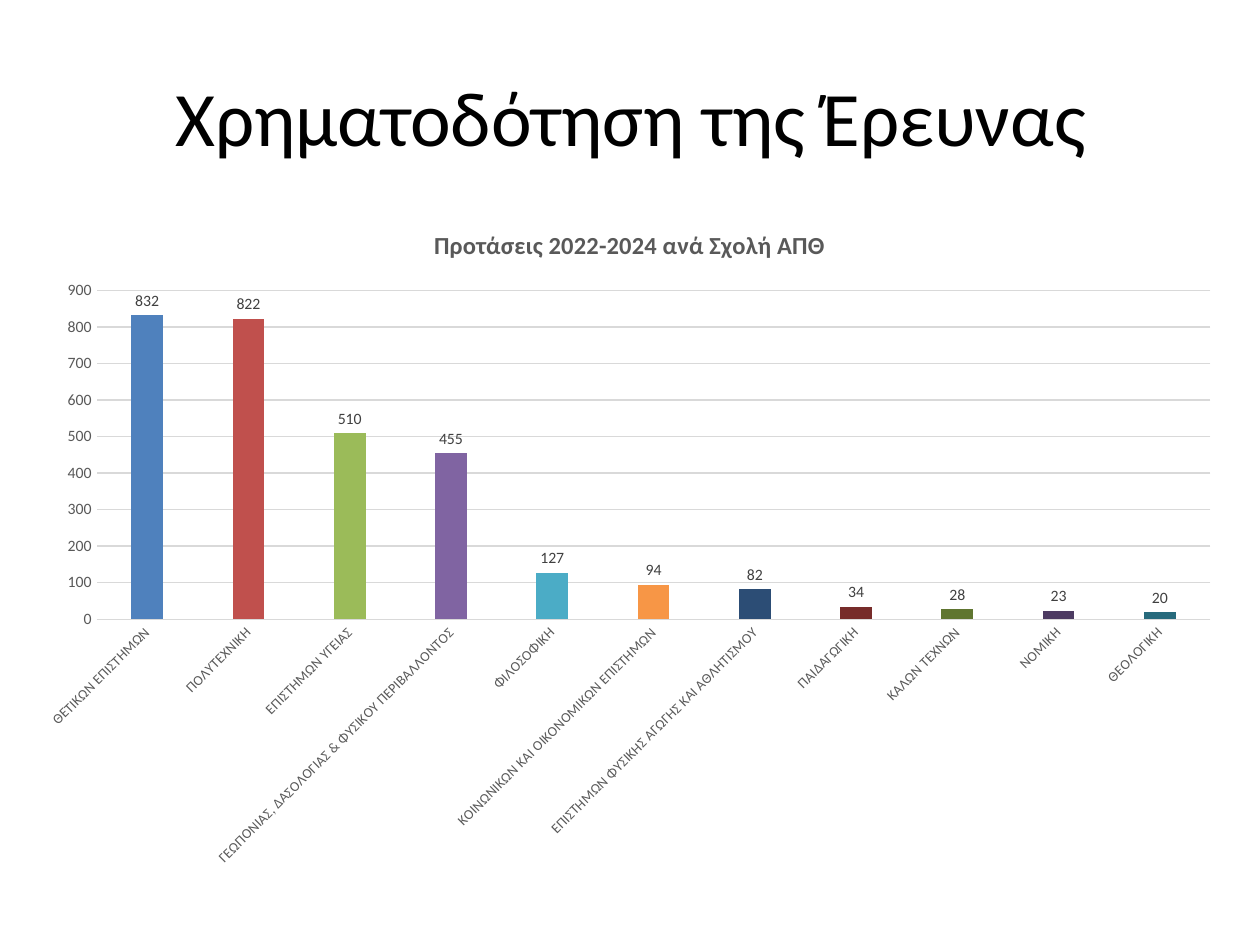
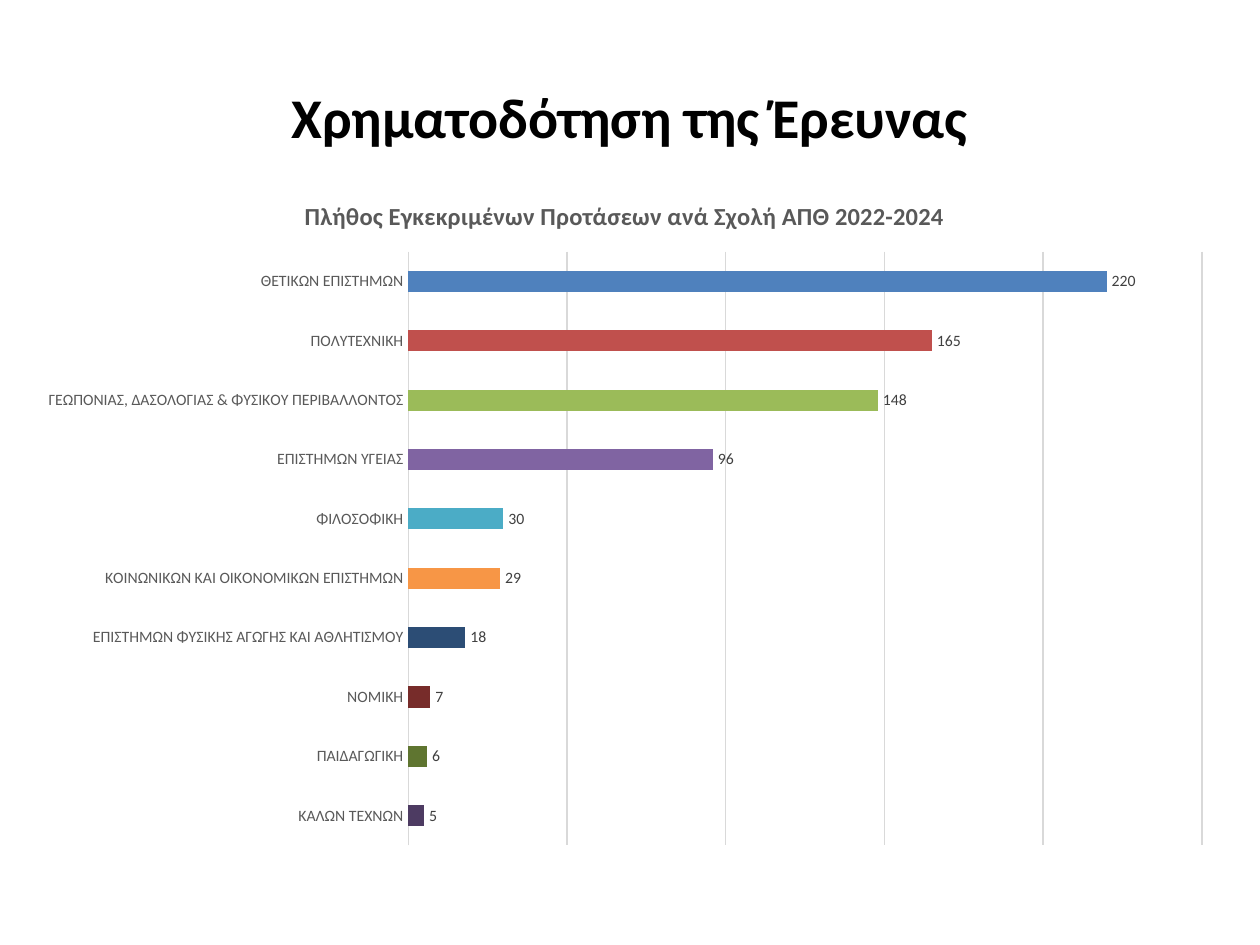
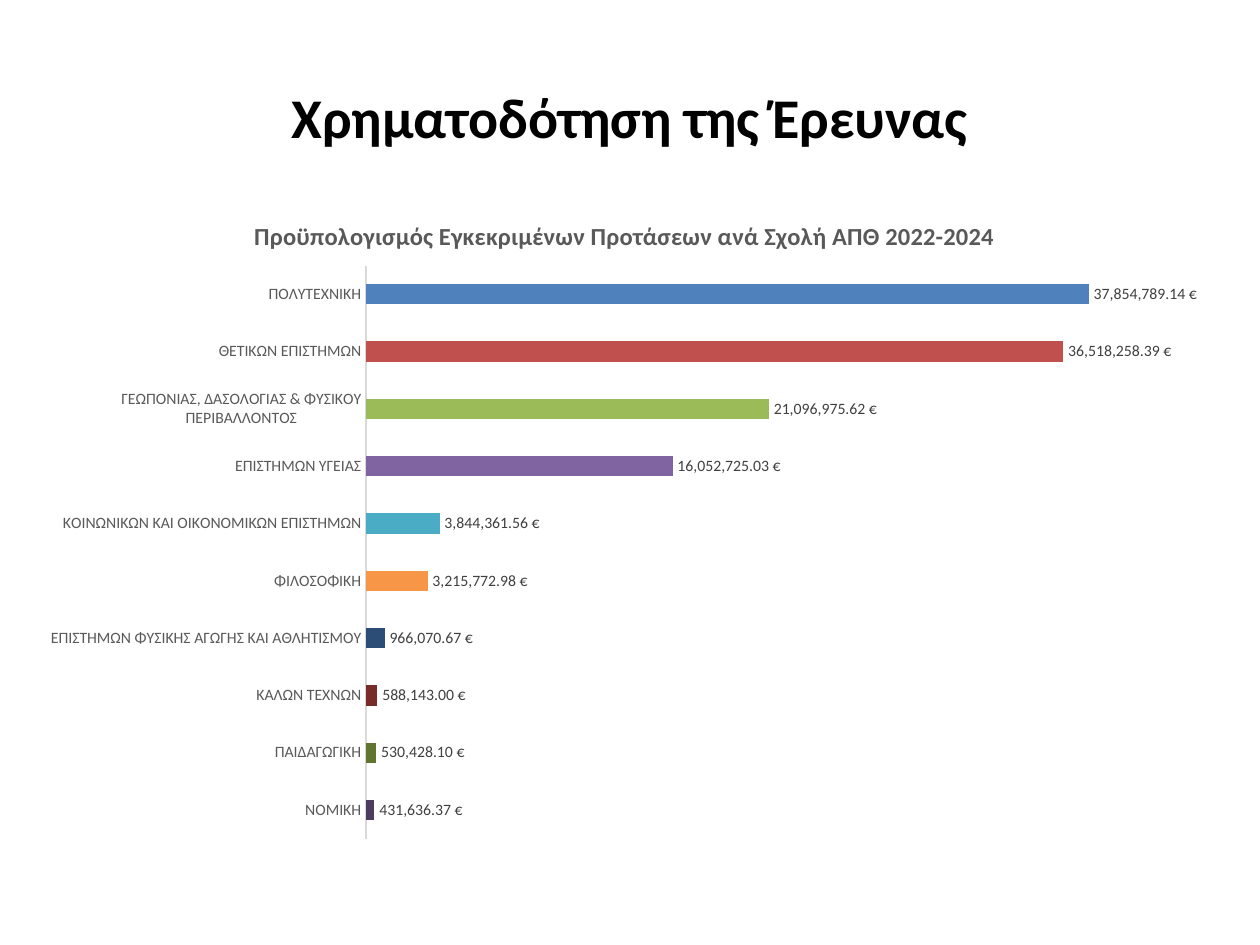
from lxml import etree
from pptx import Presentation
from pptx import util as u
from pptx.chart.data import CategoryChartData
from pptx.dml.color import RGBColor
from pptx.enum import chart as charts
from pptx.enum import text
from pptx.oxml.ns import qn

FONT = "Calibri"
COLOURS = {"ink": "000000", "axis": "595959", "label": "404040", "rule": "D9D9D9"}
BARS = ["4F81BD", "C0504D", "9BBB59", "8064A2", "4BACC6", "F79646",
        "2C4D75", "772C2A", "5F7530", "4D3B62", "276A7C"]
SCHOOLS = {
    "science": "ΘΕΤΙΚΩΝ ΕΠΙΣΤΗΜΩΝ",
    "engineering": "ΠΟΛΥΤΕΧΝΙΚΗ",
    "health": "ΕΠΙΣΤΗΜΩΝ ΥΓΕΙΑΣ",
    "agriculture": "ΓΕΩΠΟΝΙΑΣ, ΔΑΣΟΛΟΓΙΑΣ & ΦΥΣΙΚΟΥ ΠΕΡΙΒΑΛΛΟΝΤΟΣ",
    "philosophy": "ΦΙΛΟΣΟΦΙΚΗ",
    "economics": "ΚΟΙΝΩΝΙΚΩΝ ΚΑΙ ΟΙΚΟΝΟΜΙΚΩΝ ΕΠΙΣΤΗΜΩΝ",
    "sport": "ΕΠΙΣΤΗΜΩΝ ΦΥΣΙΚΗΣ ΑΓΩΓΗΣ ΚΑΙ ΑΘΛΗΤΙΣΜΟΥ",
    "education": "ΠΑΙΔΑΓΩΓΙΚΗ",
    "arts": "ΚΑΛΩΝ ΤΕΧΝΩΝ",
    "law": "ΝΟΜΙΚΗ",
    "theology": "ΘΕΟΛΟΓΙΚΗ",
}
HEADING = "Χρηματοδότηση της Έρευνας"


def style(font, size, colour, bold=False):
    font.name, font.size, font.bold = FONT, u.Pt(size), bold
    font.color.rgb = RGBColor.from_string(COLOURS[colour])


def write(frame, words, size=32, colour="ink", bold=True):
    para = frame.paragraphs[0]
    para.alignment = text.PP_ALIGN.CENTER
    span = para.add_run()
    span.text = words
    style(span.font, size, colour, bold)


def rule(line):
    line.width = u.Pt(0.75)
    line.color.rgb = RGBColor.from_string(COLOURS["rule"])


def lay_out(parent, inner=False, **percents):
    layout = parent.find(qn("c:layout"))
    if layout is None:
        layout = etree.Element(qn("c:layout"))
        parent.insert(0, layout)
    manual = etree.SubElement(layout, qn("c:manualLayout"))
    settings = {"layoutTarget": "inner"} if inner else {}
    settings |= {"xMode": "edge", "yMode": "edge"}
    settings |= {key: str(round(value / 100, 4)) for key, value in percents.items()}
    for key, value in settings.items():
        etree.SubElement(manual, qn(f"c:{key}")).set("val", value)


class Report:
    """Holds the deck, its shared style and the current page."""

    def __init__(self):
        self.deck = Presentation()
        self.deck.slide_width, self.deck.slide_height = u.Inches(10), u.Inches(7.5)
        self.page = None

    def place(self, left, top, width, height):
        across, down = self.deck.slide_width / 100, self.deck.slide_height / 100
        return [int(share * unit) for share, unit in
                zip((left, top, width, height), (across, down) * 2)]

    def add_page(self, words, at=(5, 4, 90, 16.67), **form):
        self.page = self.deck.slides.add_slide(self.deck.slide_layouts[5])
        box = self.page.shapes.title
        box.left, box.top, box.width, box.height = self.place(*at)
        box.text_frame.vertical_anchor = text.MSO_ANCHOR.MIDDLE
        write(box.text_frame, words, **form)

    def add_bars(self, title, values, at, plot_at, title_left, top_value, step,
                 upright=False, grid=True, label_format="General", gap=182):
        data = CategoryChartData()
        data.categories = [SCHOOLS[school] for school in values]
        data.add_series("Series 1", list(values.values()))
        kind = charts.XL_CHART_TYPE
        chart = self.page.shapes.add_chart(
            kind.COLUMN_CLUSTERED if upright else kind.BAR_CLUSTERED,
            *self.place(*at), data).chart
        style(chart.font, 10, "ink")
        chart.has_legend = False
        write(chart.chart_title.text_frame, title, size=14, colour="axis")
        lay_out(chart.chart_title._element, x=title_left, y=2.9)
        chart.chart_title.include_in_layout = False
        plot_area = chart._chartSpace.chart.plotArea
        lay_out(plot_area, inner=True, **dict(zip("xywh", plot_at)))
        self.format_axes(chart, upright, grid, top_value, step)
        self.format_plot(chart.plots[0], gap, -27 if upright else 0, label_format)

    def format_axes(self, chart, upright, grid, top_value, step):
        schools, amounts = chart.category_axis, chart.value_axis
        for axis, size in ((schools, 8 if upright else 9), (amounts, 9)):
            axis.major_tick_mark = axis.minor_tick_mark = charts.XL_TICK_MARK.NONE
            style(axis.tick_labels.font, size, "axis")
        schools.has_major_gridlines = False
        rule(schools.format.line)
        schools.reverse_order = not upright
        if upright:
            schools._element.txPr.bodyPr.set("rot", str(-45 * 60000))
        amounts.minimum_scale, amounts.maximum_scale = 0, top_value
        amounts.major_unit = step
        amounts.format.line.fill.background()
        amounts.has_major_gridlines = grid
        if grid:
            rule(amounts.major_gridlines.format.line)
        amounts.visible = upright

    def format_plot(self, plot, gap, overlap, label_format):
        plot.vary_by_categories = False
        plot.gap_width, plot.overlap = gap, overlap
        plot.has_data_labels = True
        labels = plot.data_labels
        labels.show_value = True
        labels.position = charts.XL_LABEL_POSITION.OUTSIDE_END
        labels.number_format, labels.number_format_is_linked = label_format, False
        style(labels.font, 9, "label")
        series = plot.series[0]
        for index, colour in zip(range(len(series.values)), BARS):
            fill = series.points[index].format.fill
            fill.solid()
            fill.fore_color.rgb = RGBColor.from_string(colour)


def main():
    report = Report()

    report.add_page(HEADING, at=(5.1, 3.9, 90, 16.67), size=44, bold=False)
    report.add_bars(
        "Προτάσεις 2022-2024 ανά Σχολή ΑΠΘ",
        {"science": 832, "engineering": 822, "health": 510, "agriculture": 455,
         "philosophy": 127, "economics": 94, "sport": 82, "education": 34,
         "arts": 28, "law": 23, "theology": 20},
        at=(2, 21.6, 96.1, 71.33), plot_at=(5.9, 12.8, 92, 48.8), title_left=33.4,
        top_value=900, step=100, upright=True, gap=219)

    report.add_page(HEADING)
    report.add_bars(
        "Πλήθος Εγκεκριμένων Προτάσεων ανά Σχολή ΑΠΘ 2022-2024",
        {"science": 220, "engineering": 165, "agriculture": 148, "health": 96,
         "philosophy": 30, "economics": 29, "sport": 18, "law": 7,
         "education": 6, "arts": 5},
        at=(2, 18.53, 95.3, 72.4), plot_at=(31.9, 11.2, 66.1, 86.8), title_left=22.9,
        top_value=250, step=50)

    report.add_page(HEADING)
    report.add_bars(
        "Προϋπολογισμός Εγκεκριμένων Προτάσεων ανά Σχολή ΑΠΘ 2022-2024",
        {"engineering": 37854789.14, "science": 36518258.39,
         "agriculture": 21096975.62, "health": 16052725.03,
         "economics": 3844361.56, "philosophy": 3215772.98, "sport": 966070.67,
         "arts": 588143, "education": 530428.1, "law": 431636.37},
        at=(2, 20.67, 95.3, 70.27), plot_at=(28.4, 10.6, 63.6, 86.3), title_left=18.7,
        top_value=40000000, step=5000000, grid=False, label_format='#,##0.00\\ "€"')

    report.deck.save("out.pptx")


if __name__ == "__main__":
    main()
